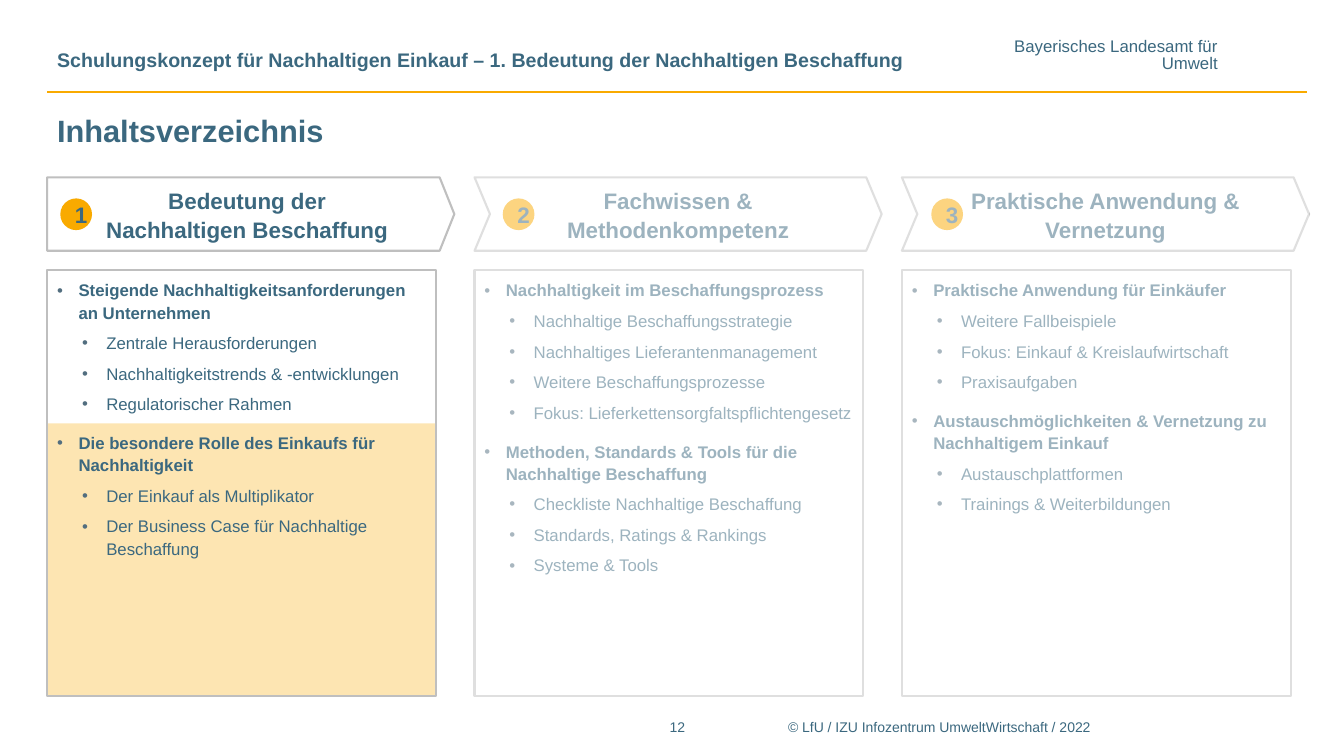
"""Build the table-of-contents slide of the sustainable purchasing training."""
from dataclasses import dataclass
from typing import Optional

import pptx
import pptx.dml.color
import pptx.enum.shapes
import pptx.enum.text
import pptx.oxml.ns
import pptx.slide
import pptx.util
from lxml import etree
from pptx.util import Cm, Pt

RGBColor = pptx.dml.color.RGBColor
Shape = pptx.enum.shapes.MSO_SHAPE
Anchor = pptx.enum.text.MSO_ANCHOR
Align = pptx.enum.text.PP_ALIGN

BLUE = RGBColor(0x3B, 0x68, 0x7F)
BULLET_BLUE = RGBColor(0x52, 0x6E, 0x7F)
ORANGE = RGBColor(0xF9, 0xAA, 0x00)
GREY = RGBColor(0xBF, 0xBF, 0xBF)
WHITE = RGBColor(0xFF, 0xFF, 0xFF)

LEFT = 1.19
COLUMN_PITCH = 10.77
BOX_TOP, BOX_WIDTH, BOX_HEIGHT = 6.81, 9.8, 10.72
HEADING_TOP, HEADING_WIDTH, HEADING_HEIGHT = 4.47, 10.26, 1.85
BADGE_TOP, BADGE_SIZE = 5.0, 0.8


@dataclass
class Topic:
    title: str
    items: list[str]


@dataclass
class Chapter:
    heading: str
    outline: Shape
    point: float
    badge_offset: float
    topics: list[Topic]


@dataclass
class Label:
    text: str
    area: tuple[float, float, float, float]
    size: float
    bold: bool = False
    align: Align = Align.LEFT
    anchor: Anchor = Anchor.TOP
    spacing: float = 1.0
    inset: Optional[float] = None
    wrap: bool = True


CHAPTERS = [
    Chapter("Bedeutung der\nNachhaltigen Beschaffung", Shape.PENTAGON, 0.2, 0.33, [
        Topic("Steigende Nachhaltigkeitsanforderungen an Unternehmen", [
            "Zentrale Herausforderungen",
            "Nachhaltigkeitstrends & -entwicklungen",
            "Regulatorischer Rahmen"]),
        Topic("Die besondere Rolle des Einkaufs für Nachhaltigkeit", [
            "Der Einkauf als Multiplikator",
            "Der Business Case für Nachhaltige Beschaffung"]),
    ]),
    Chapter("Fachwissen & Methodenkompetenz", Shape.CHEVRON, 0.21, 0.71, [
        Topic("Nachhaltigkeit im Beschaffungsprozess", [
            "Nachhaltige Beschaffungsstrategie",
            "Nachhaltiges Lieferantenmanagement",
            "Weitere Beschaffungsprozesse",
            "Fokus: Lieferkettensorgfaltspflichtengesetz"]),
        Topic("Methoden, Standards & Tools für die Nachhaltige Beschaffung", [
            "Checkliste Nachhaltige Beschaffung",
            "Standards, Ratings & Rankings",
            "Systeme & Tools"]),
    ]),
    Chapter("Praktische Anwendung &\nVernetzung", Shape.CHEVRON, 0.21, 0.74, [
        Topic("Praktische Anwendung für Einkäufer", [
            "Weitere Fallbeispiele",
            "Fokus: Einkauf & Kreislaufwirtschaft",
            "Praxisaufgaben"]),
        Topic("Austauschmöglichkeiten & Vernetzung zu Nachhaltigem Einkauf", [
            "Austauschplattformen",
            "Trainings & Weiterbildungen"]),
    ]),
]

LABELS = [
    Label("Schulungskonzept für Nachhaltigen Einkauf – 1. Bedeutung der Nachhaltigen Beschaffung",
          (LEFT, 0.61, 23.9, 1.32), 14, bold=True, anchor=Anchor.BOTTOM, spacing=0.85),
    Label("Bayerisches Landesamt für\nUmwelt", (25.53, 0.97, 5.16, 0.86), 12,
          align=Align.RIGHT, spacing=0.85, inset=0, wrap=False),
    Label("Inhaltsverzeichnis", (LEFT, 2.59, 31.75, 1.4), 22, bold=True, anchor=Anchor.MIDDLE),
    Label("12", (16.41, 17.98, 1.32, 0.79), 10, align=Align.CENTER),
    Label("© LfU / IZU\u00a0Infozentrum UmweltWirtschaft / 2022".replace("\u00a0", " "),
          (19.61, 17.98, 13.61, 0.79), 10),
]


def style_font(para, size: float, bold: bool) -> None:
    para.font.name = "Arial"
    para.font.size = Pt(size)
    para.font.bold = bold
    para.font.color.rgb = BLUE


def set_insets(frame, side: float, end: float) -> None:
    frame.margin_left = frame.margin_right = Cm(side)
    frame.margin_top = frame.margin_bottom = Cm(end)


def add_label(page: pptx.slide.Slide, label: Label) -> None:
    frame = page.shapes.add_textbox(*map(Cm, label.area)).text_frame
    frame.word_wrap = label.wrap
    frame.vertical_anchor = label.anchor
    if label.inset is not None:
        set_insets(frame, label.inset, label.inset)
    frame.text = label.text
    for para in frame.paragraphs:
        para.alignment = label.align
        para.line_spacing = label.spacing
        style_font(para, label.size, label.bold)


def add_figure(page: pptx.slide.Slide, kind: Shape, left: float, top: float, width: float,
               height: float, fill: Optional[RGBColor] = None, opacity: int = 100):
    figure = page.shapes.add_shape(kind, Cm(left), Cm(top), Cm(width), Cm(height))
    figure.shadow.inherit = False
    if fill is None:
        figure.fill.background()
        figure.line.color.rgb = GREY
        figure.line.width = Pt(1.5)
    else:
        figure.fill.solid()
        figure.fill.fore_color.rgb = fill
        figure.line.fill.background()
    if opacity < 100:
        color = figure._element.spPr.find(".//" + pptx.oxml.ns.qn("a:srgbClr"))
        etree.SubElement(color, pptx.oxml.ns.qn("a:alpha"), val=str(opacity * 1000))
    return figure


def add_centred_text(figure, text: str, spacing: float) -> None:
    frame = figure.text_frame
    frame.vertical_anchor = Anchor.MIDDLE
    para = frame.paragraphs[0]
    para.text = text
    para.alignment = Align.CENTER
    para.line_spacing = spacing
    style_font(para, 16, True)


def add_bullet(para, text: str, level: int, space_before: float) -> None:
    para.text = text
    para.level = level
    para.alignment = Align.LEFT
    para.line_spacing = 1.1
    para.space_before = Pt(space_before)
    para.space_after = Pt(3)
    margin, hanging = ((0.54, 0.54), (1.24, 0.61))[level]
    properties = para._p.get_or_add_pPr()
    properties.set("marL", str(Cm(margin)))
    properties.set("indent", str(-Cm(hanging)))
    color = etree.SubElement(properties, pptx.oxml.ns.qn("a:buClr"))
    etree.SubElement(color, pptx.oxml.ns.qn("a:srgbClr"), val=str(BULLET_BLUE))
    etree.SubElement(properties, pptx.oxml.ns.qn("a:buFont"), typeface="Arial")
    etree.SubElement(properties, pptx.oxml.ns.qn("a:buChar"), char="•")
    style_font(para, 12, level == 0)


def add_chapter(page: pptx.slide.Slide, number: int, chapter: Chapter) -> None:
    left = LEFT + (number - 1) * COLUMN_PITCH
    box = add_figure(page, Shape.RECTANGLE, left, BOX_TOP, BOX_WIDTH, BOX_HEIGHT)
    frame = box.text_frame
    frame.vertical_anchor = Anchor.TOP
    set_insets(frame, 0.25, 0.2)
    lines = [(text, level) for topic in chapter.topics
             for text, level in [(topic.title, 0), *((item, 1) for item in topic.items)]]
    for index, (text, level) in enumerate(lines):
        para = frame.add_paragraph() if index else frame.paragraphs[0]
        add_bullet(para, text, level, (9, 3)[level] if index else 0)

    heading = add_figure(page, chapter.outline, left, HEADING_TOP, HEADING_WIDTH, HEADING_HEIGHT)
    heading.adjustments[0] = chapter.point
    set_insets(heading.text_frame, 0.1, 0.1)
    add_centred_text(heading, chapter.heading, 1.06)
    badge = add_figure(page, Shape.OVAL, left + chapter.badge_offset, BADGE_TOP,
                       BADGE_SIZE, BADGE_SIZE, ORANGE)
    add_centred_text(badge, str(number), 1.0)


def main() -> None:
    deck = pptx.Presentation()
    deck.slide_width, deck.slide_height = Cm(33.87), Cm(19.05)
    page = deck.slides.add_slide(deck.slide_layouts[6])
    rule = page.shapes.add_connector(pptx.enum.shapes.MSO_CONNECTOR.STRAIGHT,
                                     Cm(LEFT), Cm(2.32), Cm(32.94), Cm(2.32))
    rule.line.color.rgb = ORANGE
    rule.line.width = Pt(2)
    etree.SubElement(rule._element.spPr, pptx.oxml.ns.qn("a:effectLst"))
    add_figure(page, Shape.RECTANGLE, LEFT, 10.67, BOX_WIDTH, 6.86, ORANGE, 30)
    for number, chapter in enumerate(CHAPTERS, 1):
        add_chapter(page, number, chapter)
    add_figure(page, Shape.RECTANGLE, 11.79, 4.32, 21.21, 13.34, WHITE, 50)
    for label in LABELS:
        add_label(page, label)
    deck.save("out.pptx")


if __name__ == "__main__":
    main()
